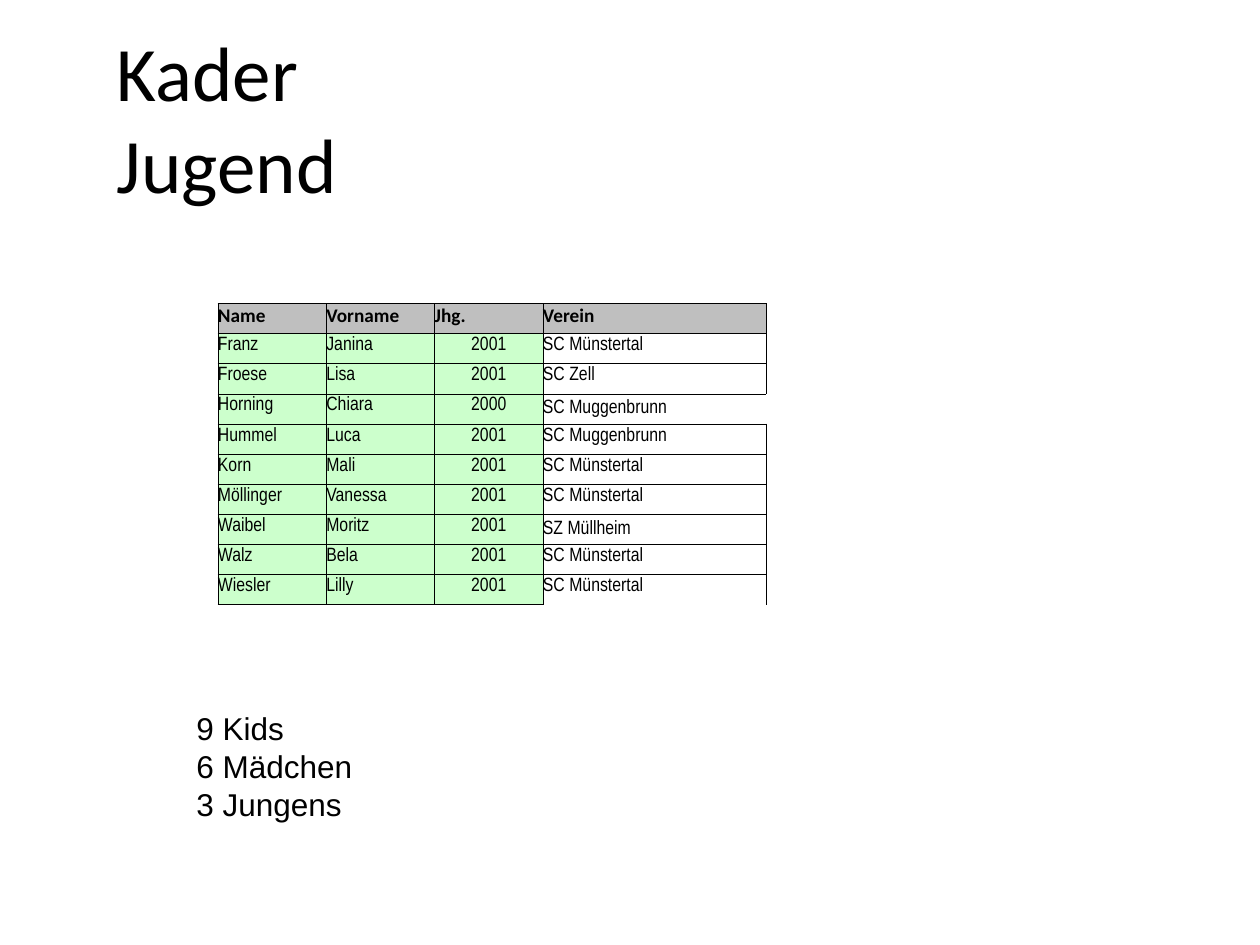
from lxml import etree
from pptx import Presentation
from pptx import util as u
from pptx.dml.color import RGBColor
from pptx.enum import text
from pptx.oxml.ns import qn

HEADINGS = ["Name", "Vorname", "Jhg.", "Verein"]
SQUAD = [
    ["Franz", "Janina", "2001", "SC Münstertal"],
    ["Froese", "Lisa", "2001", "SC Zell"],
    ["Horning", "Chiara", "2000", "SC Muggenbrunn"],
    ["Hummel", "Luca", "2001", "SC Muggenbrunn"],
    ["Korn", "Mali", "2001", "SC Münstertal"],
    ["Möllinger", "Vanessa", "2001", "SC Münstertal"],
    ["Waibel", "Moritz", "2001", "SZ Müllheim"],
    ["Walz", "Bela", "2001", "SC Münstertal"],
    ["Wiesler", "Lilly", "2001", "SC Münstertal"],
]
WIDTH_SHARES = [0.86, 0.86, 0.86, 1.77]
BOTTOM_ANCHORED = {"SC Muggenbrunn": 3, "SZ Müllheim": 7}
OPEN_EDGES = {(3, 3): "R", (4, 3): "", (9, 3): "B"}


def color(value):
    """Turn a hex string into a colour."""
    return RGBColor.from_string(value)


def write(frame, content, size, font, bold=False, align=text.PP_ALIGN.LEFT,
          anchor=text.MSO_ANCHOR.TOP):
    """Fill a text frame or table cell with uniformly formatted text."""
    frame.vertical_anchor = anchor
    frame = getattr(frame, "text_frame", frame)
    frame.text = content
    for paragraph in frame.paragraphs:
        paragraph.alignment = align
        for run in paragraph.runs:
            run.font.size = u.Pt(size)
            run.font.name = font
            run.font.bold = bold
            run.font.color.rgb = color("000000")


def add_text(slide, box, content, wrap, **style):
    """Place a text box at left, top, width, height in inches."""
    frame = slide.shapes.add_textbox(*map(u.Inches, box)).text_frame
    frame.word_wrap = wrap
    write(frame, content, **style)


def set_borders(cell, open_edges):
    """Draw thin black cell edges except the open ones."""
    properties = cell._tc.get_or_add_tcPr()
    for edge in "LRTB":
        line = etree.SubElement(properties, qn(f"a:ln{edge}"), w=str(u.Pt(0.5)))
        if edge in open_edges:
            etree.SubElement(line, qn("a:noFill"))
        else:
            fill = etree.SubElement(line, qn("a:solidFill"))
            etree.SubElement(fill, qn("a:srgbClr"), val="000000")


def format_cell(cell, fill, open_edges):
    """Set margins, borders and fill of one cell."""
    cell.margin_left = cell.margin_right = cell.margin_top = 0
    cell.margin_bottom = u.Inches(0.05)
    set_borders(cell, open_edges)
    if fill:
        cell.fill.solid()
        cell.fill.fore_color.rgb = color(fill)
    else:
        cell.fill.background()


def add_squad(slide, box):
    """Place the squad table in the given box."""
    rows = [HEADINGS] + SQUAD
    left, top, width, height = map(u.Inches, box)
    table = slide.shapes.add_table(
        len(rows), len(HEADINGS), left, top, width, height).table
    table.horz_banding = False
    for column, share in zip(table.columns, WIDTH_SHARES):
        column.width = int(width * share / sum(WIDTH_SHARES))
    for r, row in enumerate(rows):
        table.rows[r].height = height // len(rows)
        for c, value in enumerate(row):
            cell = table.cell(r, c)
            header, club = r == 0, c == 3
            fill = "BFBFBF" if header else None if club else "CCFFCC"
            format_cell(cell, fill, OPEN_EDGES.get((r, c), ""))
            low = header or BOTTOM_ANCHORED.get(value) == r
            write(cell, value, size=11, bold=header,
                  font="Calibri" if header else "Arial Narrow",
                  align=(text.PP_ALIGN.CENTER if c == 2 and not header
                         else text.PP_ALIGN.LEFT),
                  anchor=text.MSO_ANCHOR.BOTTOM if low else text.MSO_ANCHOR.MIDDLE)


def main():
    """Build and save the squad slide."""
    deck = Presentation()
    deck.slide_width, deck.slide_height = u.Inches(10), u.Inches(7.5)
    slide = deck.slides.add_slide(deck.slide_layouts[6])
    add_text(slide, (0.83, 0.3, 8.83, 1.25), "Kader\vJugend", True,
             size=44, font="Calibri", anchor=text.MSO_ANCHOR.MIDDLE)
    add_text(slide, (1.46, 5.58, 1.45, 1.92), "9 Kids\n6 Mädchen\n3 Jungens", False,
             size=18, font="Arial")
    add_squad(slide, (1.73, 2.41, 4.35, 2.39))
    deck.save("out.pptx")


if __name__ == "__main__":
    main()
